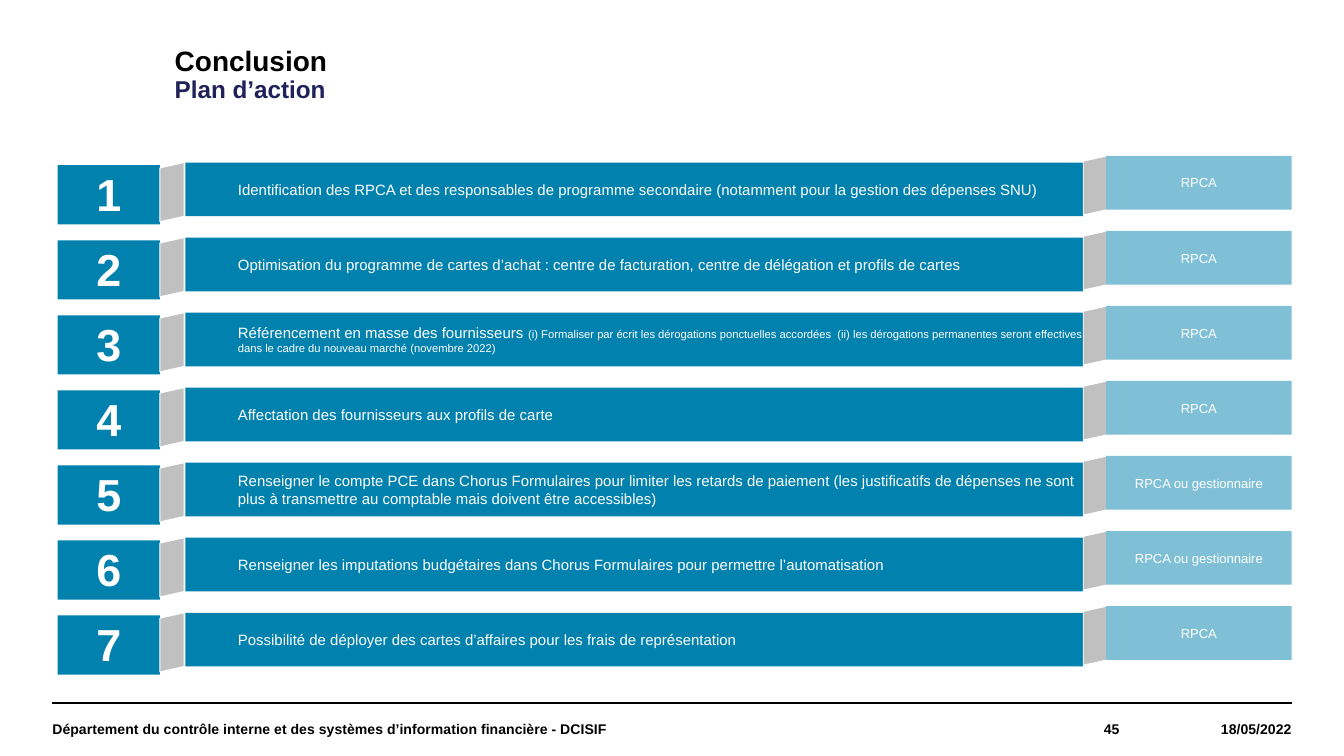
from dataclasses import dataclass

from lxml import etree
from pptx import Presentation
from pptx.dml.color import RGBColor
from pptx.enum.shapes import MSO_CONNECTOR, MSO_SHAPE
from pptx.enum.text import MSO_ANCHOR, PP_ALIGN
from pptx.oxml.ns import qn
from pptx.util import Inches, Pt

RECT = MSO_SHAPE.RECTANGLE
STRAIGHT = MSO_CONNECTOR.STRAIGHT
MIDDLE = MSO_ANCHOR.MIDDLE
LEFT, CENTER, RIGHT = PP_ALIGN.LEFT, PP_ALIGN.CENTER, PP_ALIGN.RIGHT


@dataclass(frozen=True)
class Theme:
    font: str = "Arial"
    black: str = "000000"
    white: str = "FFFFFF"
    navy: str = "21215A"
    blue: str = "0081AE"
    pale: str = "7FC0D6"
    gray: str = "C0C0C0"
    title: float = 15
    sub: float = 13
    digit: float = 24
    step: float = 8
    note: float = 6
    owner: float = 7
    foot: float = 7.5


THEME = Theme()

# Step, small note, owner
STEPS = [
    ("Identification des RPCA et des responsables de programme secondaire "
     "(notamment pour la gestion des dépenses SNU)", "", "RPCA"),
    ("Optimisation du programme de cartes d’achat : centre de facturation, "
     "centre de délégation et profils de cartes", "", "RPCA"),
    ("Référencement en masse des fournisseurs ",
     "(i) Formaliser par écrit les dérogations ponctuelles accordées  (ii) les "
     "dérogations permanentes seront effectives dans le cadre du nouveau marché "
     "(novembre 2022)", "RPCA"),
    ("Affectation des fournisseurs aux profils de carte", "", "RPCA"),
    ("Renseigner le compte PCE dans Chorus Formulaires pour limiter les retards "
     "de paiement (les justificatifs de dépenses ne sont plus à transmettre au "
     "comptable mais doivent être accessibles)", "", "RPCA ou gestionnaire"),
    ("Renseigner les imputations budgétaires dans Chorus Formulaires pour "
     "permettre l’automatisation", "", "RPCA ou gestionnaire"),
    ("Possibilité de déployer des cartes d’affaires pour les frais de "
     "représentation", "", "RPCA"),
]
FIRST, LAST = 1.21, 4.56
PITCH = (LAST - FIRST) / (len(STEPS) - 1)

FOOTER = [
    ("Département du contrôle interne et des systèmes d’information financière "
     "- DCISIF", 0.39, 6.46, LEFT),
    ("45", 6.85, 1.48, RIGHT),
    ("18/05/2022", 8.33, 1.28, RIGHT),
]


def paint(shape, color):
    shape.shadow.inherit = False
    shape.fill.solid()
    shape.fill.fore_color.rgb = RGBColor.from_string(color)


def style(run, size, color, bold=False):
    font = run.font
    font.name = THEME.font
    font.size = Pt(size)
    font.bold = bold
    font.color.rgb = RGBColor.from_string(color)


def set_frame(shape, left=0, top=0):
    """Wrap and centre the text vertically, with only these insets."""
    frame = shape.text_frame
    frame.word_wrap = True
    frame.vertical_anchor = MIDDLE
    frame.margin_left, frame.margin_top = Inches(left), Inches(top)
    frame.margin_right = frame.margin_bottom = Inches(0)
    return frame


def add_label(slide, text, box, size, color, align):
    shape = slide.shapes.add_textbox(*map(Inches, box))
    frame = set_frame(shape)
    frame.text = text
    for para in frame.paragraphs:
        para.alignment = align
        style(para.runs[0], size, color, True)
    return frame


def add_block(slide, text, box, fill, size, align, bold=False, left=0, top=0):
    shape = slide.shapes.add_shape(RECT, *map(Inches, box))
    paint(shape, fill)
    shape.line.fill.background()
    frame = set_frame(shape, left, top)
    frame.text = text
    para = frame.paragraphs[0]
    para.alignment = align
    style(para.runs[0], size, THEME.white, bold)
    return para


def add_fold(slide, x, y):
    """Draw the slanted gray side that joins two blocks."""
    wide, high, drop = 0.18, 0.4, 0.04
    points = [(x, y + drop), (x + wide, y), (x + wide, y + high),
              (x, y + high + drop)]
    points = [(Inches(a), Inches(b)) for a, b in points]
    build = slide.shapes.build_freeform(*points[0])
    build.add_line_segments(points[1:], close=True)
    shape = build.convert_to_shape()
    paint(shape, THEME.gray)
    shape.line.color.rgb = RGBColor.from_string(THEME.white)
    shape.line.width = Pt(0.5)


def add_step(slide, number, step, note, owner):
    y = FIRST + (number - 1) * PITCH
    para = add_block(slide, step, (1.38, y, 6.68, 0.4), THEME.blue,
                     THEME.step, LEFT, left=0.39)
    if note:
        run = para.add_run()
        run.text = note
        style(run, THEME.note, THEME.white)
    para = add_block(slide, str(number), (0.43, y + 0.02, 0.76, 0.44),
                     THEME.blue, THEME.digit, CENTER, bold=True, top=0.04)
    para.line_spacing = 0.85
    para.space_after = Pt(6)
    add_fold(slide, 1.19, y)
    add_fold(slide, 8.06, y - 0.05)
    add_block(slide, owner, (8.23, y - 0.05, 1.38, 0.4), THEME.pale,
              THEME.owner, CENTER)


def add_rule(slide):
    ends = map(Inches, (0.39, 5.23, 9.61, 5.23))
    line = slide.shapes.add_connector(STRAIGHT, *ends)
    line.line.color.rgb = RGBColor.from_string(THEME.black)
    line.line.width = Pt(0.8)
    etree.SubElement(line._element.spPr, qn("a:effectLst"))


def add_title(slide):
    frame = add_label(slide, "Conclusion\nPlan d’action",
                      (1.3, 0.17, 7.75, 0.79), THEME.title, THEME.black, LEFT)
    for para in frame.paragraphs:
        para.line_spacing = 0.9
    style(frame.paragraphs[1].runs[0], THEME.sub, THEME.navy, True)


def main():
    deck = Presentation()
    deck.slide_width = Inches(10)
    deck.slide_height = Inches(10 * 9 / 16)
    slide = deck.slides.add_slide(deck.slide_layouts[6])
    add_rule(slide)
    for text, x, wide, align in FOOTER:
        add_label(slide, text, (x, 5.23, wide, 0.39), THEME.foot,
                  THEME.black, align)
    add_title(slide)
    for number, row in enumerate(STEPS, 1):
        add_step(slide, number, *row)
    deck.save("out.pptx")


if __name__ == "__main__":
    main()
